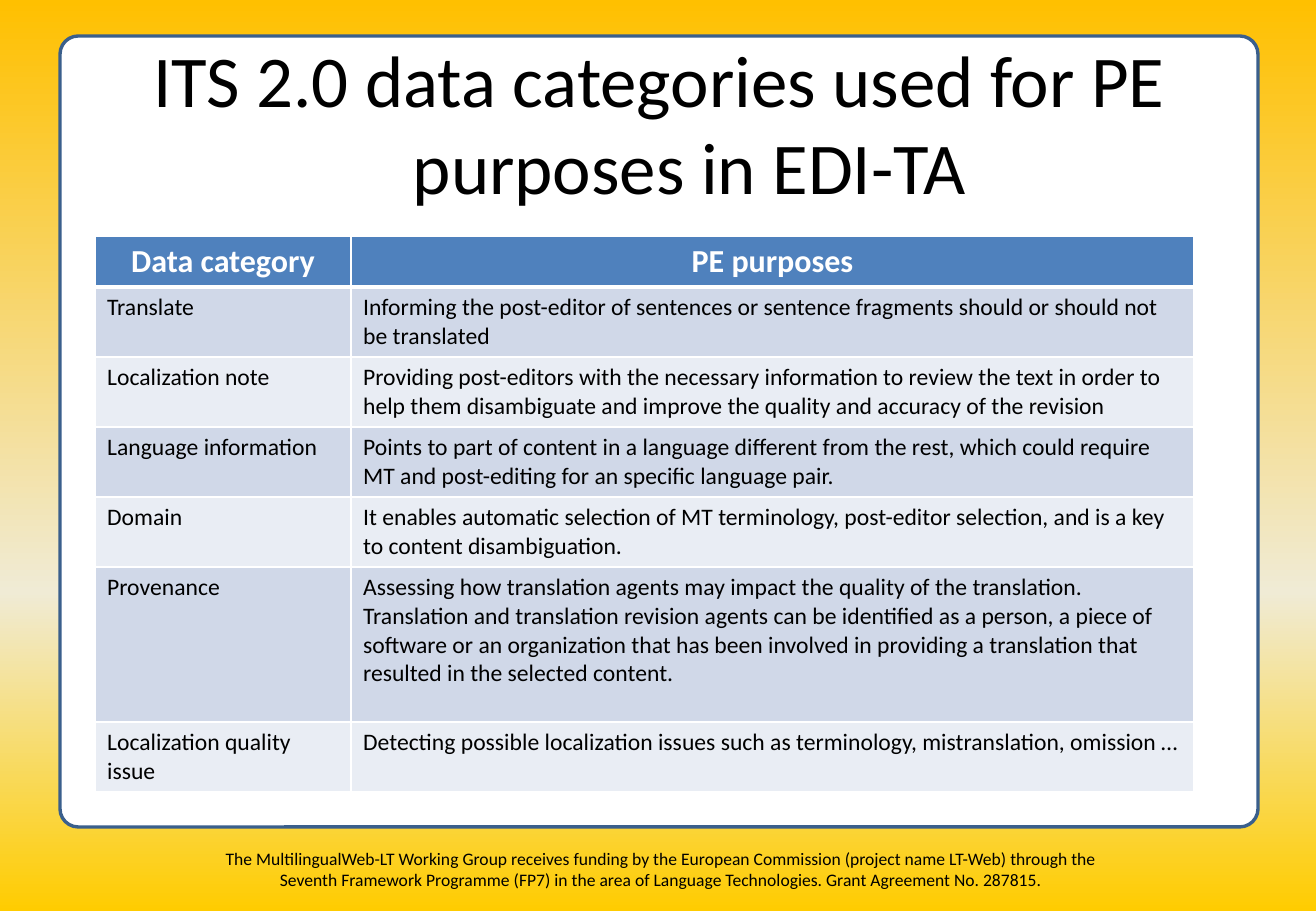
from copy import deepcopy
from typing import NamedTuple

from lxml import etree
from pptx import Presentation
from pptx.dml.color import RGBColor
from pptx.enum.shapes import MSO_SHAPE
from pptx.enum.text import MSO_ANCHOR, MSO_AUTO_SIZE, PP_ALIGN
from pptx.oxml.ns import qn
from pptx.util import Emu, Inches, Pt

ROUND_RECT = MSO_SHAPE.ROUNDED_RECTANGLE
MIDDLE = MSO_ANCHOR.MIDDLE
NO_AUTOFIT = MSO_AUTO_SIZE.NONE
LEFT, CENTER = PP_ALIGN.LEFT, PP_ALIGN.CENTER

EMU_PER_PX = 914400 / 121.5
FONT = "Calibri"
BLACK, WHITE = "000000", "FFFFFF"
PANEL_LINE = "3A5F8C"
HEADER_FILL = "4F81BD"
BAND_FILLS = ("D0D8E8", "E9EDF4")
BACKGROUND_STOPS = ((0, "FFC000"), (0.65, "F0EBD5"), (1, "FFCC00"))
COLUMN_WIDTHS = (256, 843)

TITLE = "ITS 2.0 data categories used for PE purposes in EDI-TA"
FUNDING = (
    "The MultilingualWeb-LT Working Group receives funding by the European Commission "
    "(project name LT-Web) through the Seventh Framework Programme (FP7) in the area of "
    "Language Technologies. Grant Agreement No. 287815."
)


class Row(NamedTuple):
    height: int
    category: str
    purpose: str


ROWS = (
    Row(50, "Data category", "PE purposes"),
    Row(70, "Translate",
        "Informing the post-editor of sentences or sentence fragments should or should "
        "not be translated"),
    Row(70, "Localization note",
        "Providing post-editors with the necessary information to review the text in "
        "order to help them disambiguate and improve the quality and accuracy of the "
        "revision"),
    Row(70, "Language information",
        "Points to part of content in a language different from the rest, which could "
        "require MT and post-editing for an specific language pair."),
    Row(70, "Domain",
        "It enables automatic selection of MT terminology, post-editor selection, and "
        "is a key to content disambiguation."),
    Row(155, "Provenance",
        "Assessing how translation agents may impact the quality of the translation. "
        "Translation and translation revision agents can be identified as a person, a "
        "piece of software or an organization that has been involved in providing a "
        "translation that resulted in the selected content."),
    Row(70, "Localization quality issue",
        "Detecting possible localization issues such as terminology, mistranslation, "
        "omission …"),
)


def px(n: int) -> Emu:
    return Emu(round(n * EMU_PER_PX))


def rgb(color: str) -> RGBColor:
    return RGBColor.from_string(color)


def set_text(tf, text: str, size: float, color: str = BLACK, align=CENTER,
             bold: bool = False) -> None:
    tf.text = text
    tf.word_wrap = True
    p = tf.paragraphs[0]
    p.alignment = align
    font = p.runs[0].font
    font.name, font.size, font.bold = FONT, Pt(size), bold
    font.color.rgb = rgb(color)


def paint_background(slide) -> None:
    fill = slide.background.fill
    fill.gradient()
    fill.gradient_angle = 270
    stops = slide.element.find(f".//{qn('a:gsLst')}")
    stops.append(deepcopy(stops[-1]))
    for stop, (position, color) in zip(fill.gradient_stops, BACKGROUND_STOPS):
        stop.position = position
        stop.color.rgb = rgb(color)


def add_panel(slide) -> None:
    sp = slide.shapes.add_shape(ROUND_RECT, px(60), px(36), px(1198), px(791))
    sp.adjustments[0] = 0.023
    sp.shadow.inherit = False
    sp.fill.solid()
    sp.fill.fore_color.rgb = rgb(WHITE)
    sp.line.color.rgb = rgb(PANEL_LINE)
    sp.line.width = Pt(2)


def add_funding_note(slide) -> None:
    sp = slide.shapes.add_textbox(px(197), px(842), px(928), px(49))
    set_text(sp.text_frame, FUNDING, 10.4)


def place_title(slide) -> None:
    """Fill the title placeholder and bring it in front of the panel."""
    sp = slide.shapes.title
    sp.left, sp.top, sp.width, sp.height = px(62), px(46), px(1194), px(152)
    tf = sp.text_frame
    set_text(tf, TITLE, 43.2)
    tf.auto_size = NO_AUTOFIT
    tf.vertical_anchor = MIDDLE
    pPr = tf.paragraphs[0]._p.get_or_add_pPr()
    pPr.set("marL", str(Inches(0.5)))
    pPr.set("indent", str(-Inches(0.5)))
    sp.element.getparent().append(sp.element)


def set_borders(cell, top: float, bottom: float) -> None:
    tcPr = cell._tc.get_or_add_tcPr()
    sides = (("L", 1), ("R", 1), ("T", top), ("B", bottom))
    for i, (side, width) in enumerate(sides):
        ln = etree.Element(qn(f"a:ln{side}"), w=str(Pt(width)))
        fill = etree.SubElement(ln, qn("a:solidFill"))
        etree.SubElement(fill, qn("a:srgbClr"), val=WHITE)
        tcPr.insert(i, ln)


def add_category_table(slide) -> None:
    height = sum(row.height for row in ROWS)
    frame = slide.shapes.add_table(len(ROWS), len(COLUMN_WIDTHS), px(95), px(236),
                                   px(sum(COLUMN_WIDTHS)), px(height))
    table = frame.table
    for column, width in zip(table.columns, COLUMN_WIDTHS):
        column.width = px(width)
    for i, row in enumerate(ROWS):
        table.rows[i].height = px(row.height)
        header = i == 0
        for j, text in enumerate((row.category, row.purpose)):
            cell = table.cell(i, j)
            if header:
                set_text(cell.text_frame, text, 19, WHITE, bold=True)
            else:
                set_text(cell.text_frame, text, 14, align=LEFT)
            cell.fill.solid()
            cell.fill.fore_color.rgb = rgb(HEADER_FILL if header else BAND_FILLS[(i - 1) % 2])
            set_borders(cell, top=3 if i == 1 else 1, bottom=3 if header else 1)


def main() -> None:
    prs = Presentation()
    prs.slide_width, prs.slide_height = px(1316), px(911)
    slide = prs.slides.add_slide(prs.slide_layouts[5])
    paint_background(slide)
    add_panel(slide)
    add_funding_note(slide)
    place_title(slide)
    add_category_table(slide)
    prs.save("out.pptx")


if __name__ == "__main__":
    main()
